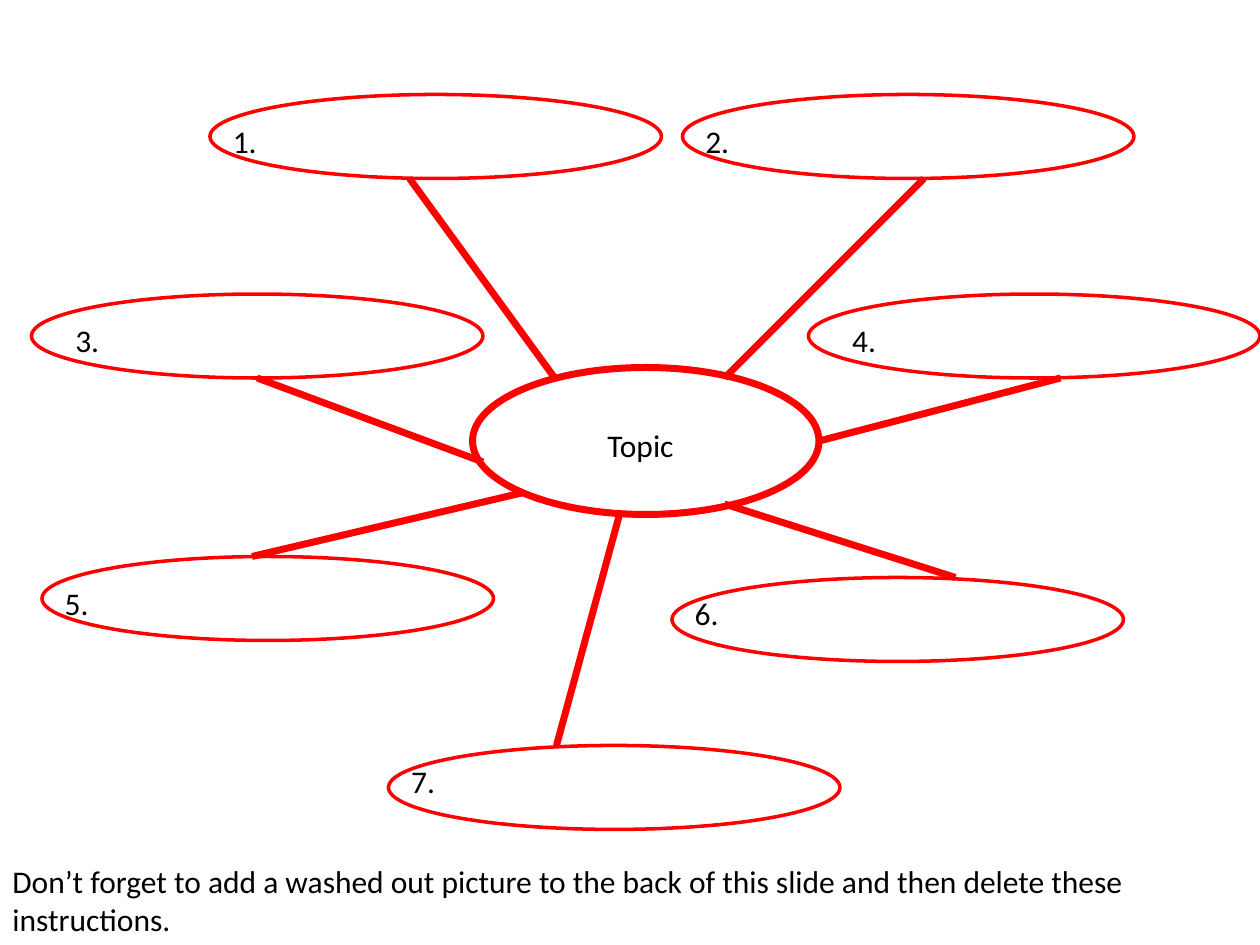
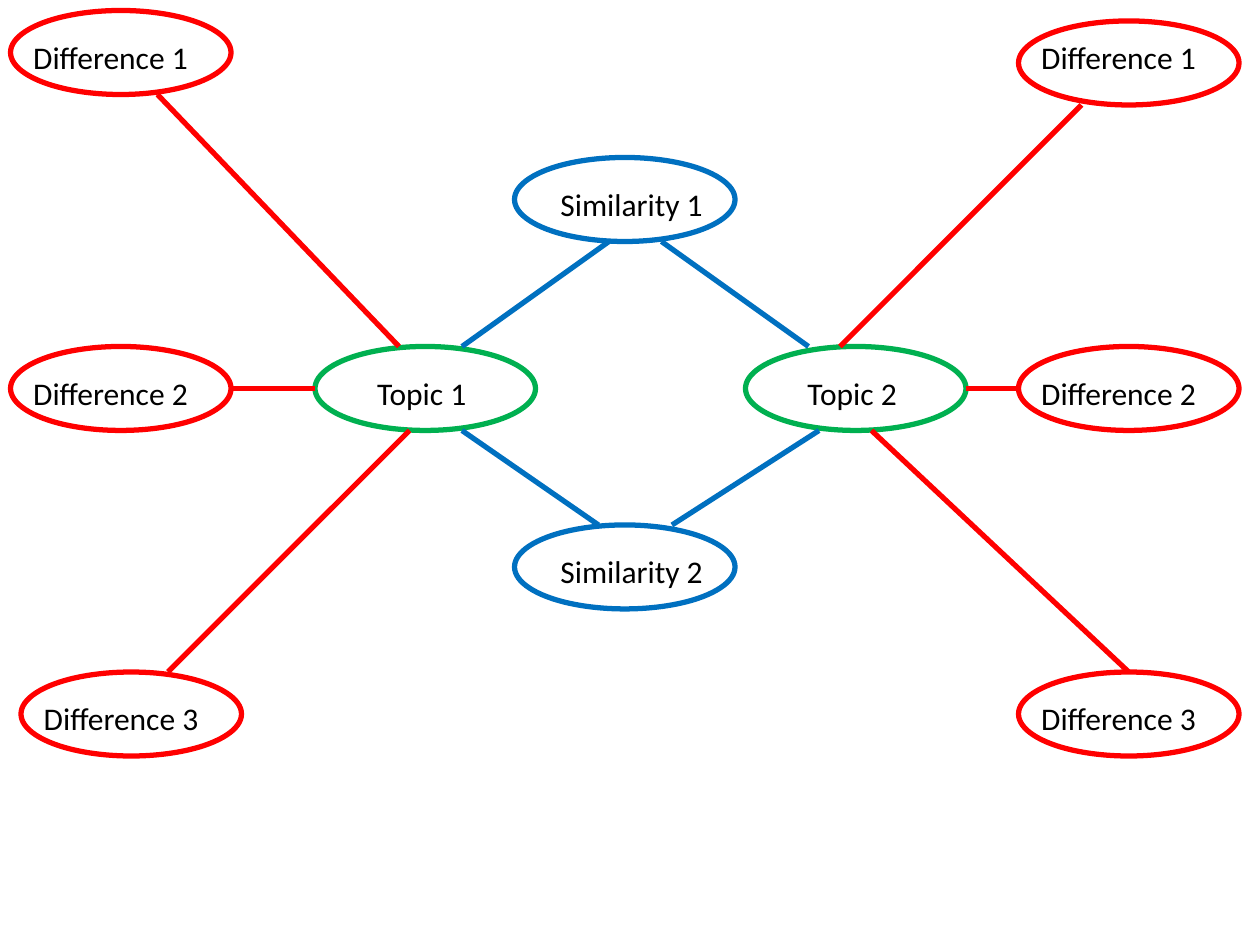
from dataclasses import dataclass
from typing import NamedTuple

from lxml.etree import SubElement
from pptx import Presentation
from pptx.dml.color import RGBColor
from pptx.enum.shapes import MSO_CONNECTOR, MSO_SHAPE
from pptx.enum.text import MSO_AUTO_SIZE, PP_ALIGN
from pptx.oxml.ns import qn
from pptx.slide import Slide
from pptx.text.text import TextFrame
from pptx.util import Pt


@dataclass(frozen=True)
class Theme:
    font: str = "Calibri"
    text_size: float = 18
    text: RGBColor = RGBColor(0x00, 0x00, 0x00)
    red: RGBColor = RGBColor(0xFF, 0x00, 0x00)
    green: RGBColor = RGBColor(0x00, 0xB0, 0x50)
    blue: RGBColor = RGBColor(0x00, 0x70, 0xC0)
    thin: float = 2
    medium: float = 3
    thick: float = 4


THEME = Theme()


class BubbleStyle(NamedTuple):
    width: float
    height: float
    label_width: float
    color: RGBColor
    weight: float
    align: PP_ALIGN = PP_ALIGN.LEFT


class Bubble(NamedTuple):
    """An oval with its label, which is offset from the oval's corner."""
    label: str
    left: float
    top: float
    style: BubbleStyle
    label_dx: float = 12
    label_dy: float = 12


class Spoke(NamedTuple):
    x1: float
    y1: float
    x2: float
    y2: float
    color: RGBColor = THEME.red


# Bubble styles
CENTRE = BubbleStyle(198, 84, 156, THEME.red, THEME.thick, PP_ALIGN.CENTER)
POINT = BubbleStyle(258, 48, 198, THEME.red, THEME.thin)
DIFFERENCE = BubbleStyle(126, 48, 114, THEME.red, THEME.medium)
TOPIC = BubbleStyle(126, 48, 114, THEME.green, THEME.medium, PP_ALIGN.CENTER)
SIMILARITY = TOPIC._replace(color=THEME.blue)

# Slide 1: one topic with seven points
TOPIC_BUBBLES = [
    Bubble("Topic", 270, 210, CENTRE, 18, 30),
    Bubble("1.", 120, 54, POINT),
    Bubble("2.", 390, 54, POINT),
    Bubble("3.", 18, 168, POINT, 24),
    Bubble("4.", 462, 168, POINT, 24),
    Bubble("5.", 24, 318, POINT),
    Bubble("6.", 384, 330, POINT, 12, 6),
    Bubble("7.", 222, 426, POINT, 12, 6),
]
TOPIC_SPOKES = [
    Spoke(234, 102, 317, 216),
    Spoke(528, 102, 414, 216),
    Spoke(147, 216, 276, 264),
    Spoke(606, 216, 468, 252),
    Spoke(144, 318, 299, 281.5),
    Spoke(546, 330, 414, 288),
    Spoke(318, 426, 354, 294),
]
INSTRUCTIONS = (
    "Don’t forget to add a washed out picture to the back of this slide "
    "and then delete these instructions."
)

# Slide 2: two topics compared
COMPARISON_BUBBLES = [
    Bubble("Difference 1", 6, 6, DIFFERENCE),
    Bubble("Difference 2", 6, 198, DIFFERENCE),
    Bubble("Difference 3", 12, 384, DIFFERENCE),
    Bubble("Topic 1 ", 180, 198, TOPIC, 6),
    Bubble("Topic 2 ", 426, 198, TOPIC, 6),
    Bubble("Difference 1", 582, 12, DIFFERENCE, 12, 6),
    Bubble("Difference 2", 582, 198, DIFFERENCE),
    Bubble("Difference 3", 582, 384, DIFFERENCE),
    Bubble("Similarity 1 ", 294, 90, SIMILARITY),
    Bubble("Similarity 2 ", 294, 300, SIMILARITY),
]
COMPARISON_SPOKES = [
    Spoke(228, 198, 90, 54),
    Spoke(180, 222, 132, 222),
    Spoke(234, 246, 96, 384),
    Spoke(480, 198, 618, 60),
    Spoke(552, 222, 582, 222),
    Spoke(498, 246, 645, 384),
    Spoke(264, 198, 348, 138, THEME.blue),
    Spoke(264, 246, 342, 300, THEME.blue),
    Spoke(462, 198, 378, 138, THEME.blue),
    Spoke(468, 246, 384, 300, THEME.blue),
]


def add_text(slide: Slide, text: str, left: float, top: float, width: float,
             height: float, align: PP_ALIGN = PP_ALIGN.LEFT) -> TextFrame:
    box = slide.shapes.add_textbox(Pt(left), Pt(top), Pt(width), Pt(height))
    frame = box.text_frame
    frame.word_wrap = True
    frame.auto_size = MSO_AUTO_SIZE.SHAPE_TO_FIT_TEXT
    frame.text = text
    paragraph = frame.paragraphs[0]
    paragraph.alignment = align
    font = paragraph.runs[0].font
    font.name = THEME.font
    font.size = Pt(THEME.text_size)
    font.color.rgb = THEME.text
    return frame


def add_bubble(slide: Slide, bubble: Bubble) -> None:
    style = bubble.style
    label = add_text(slide, bubble.label, bubble.left + bubble.label_dx,
                     bubble.top + bubble.label_dy, style.label_width, 29, style.align)
    label.margin_left = label.margin_right = Pt(1)
    oval = slide.shapes.add_shape(MSO_SHAPE.OVAL, Pt(bubble.left), Pt(bubble.top),
                                  Pt(style.width), Pt(style.height))
    oval.shadow.inherit = False
    oval.fill.background()
    oval.line.color.rgb = style.color
    oval.line.width = Pt(style.weight)


def add_spoke(slide: Slide, spoke: Spoke, weight: float) -> None:
    line = slide.shapes.add_connector(MSO_CONNECTOR.STRAIGHT, Pt(spoke.x1), Pt(spoke.y1),
                                      Pt(spoke.x2), Pt(spoke.y2))
    line.line.color.rgb = spoke.color
    line.line.width = Pt(weight)
    SubElement(line._element.spPr, qn("a:effectLst"))


def add_map(deck: Presentation, bubbles: list[Bubble], spokes: list[Spoke],
            spoke_weight: float) -> Slide:
    slide = deck.slides.add_slide(deck.slide_layouts[6])
    for bubble in bubbles:
        add_bubble(slide, bubble)
    for spoke in spokes:
        add_spoke(slide, spoke, spoke_weight)
    return slide


def main() -> None:
    deck = Presentation()
    deck.slide_width, deck.slide_height = Pt(720), Pt(540)
    topic_map = add_map(deck, TOPIC_BUBBLES, TOPIC_SPOKES, THEME.thick)
    add_text(topic_map, INSTRUCTIONS, 0, 489, 720, 51)
    add_map(deck, COMPARISON_BUBBLES, COMPARISON_SPOKES, THEME.medium)
    deck.save("out.pptx")


if __name__ == "__main__":
    main()
